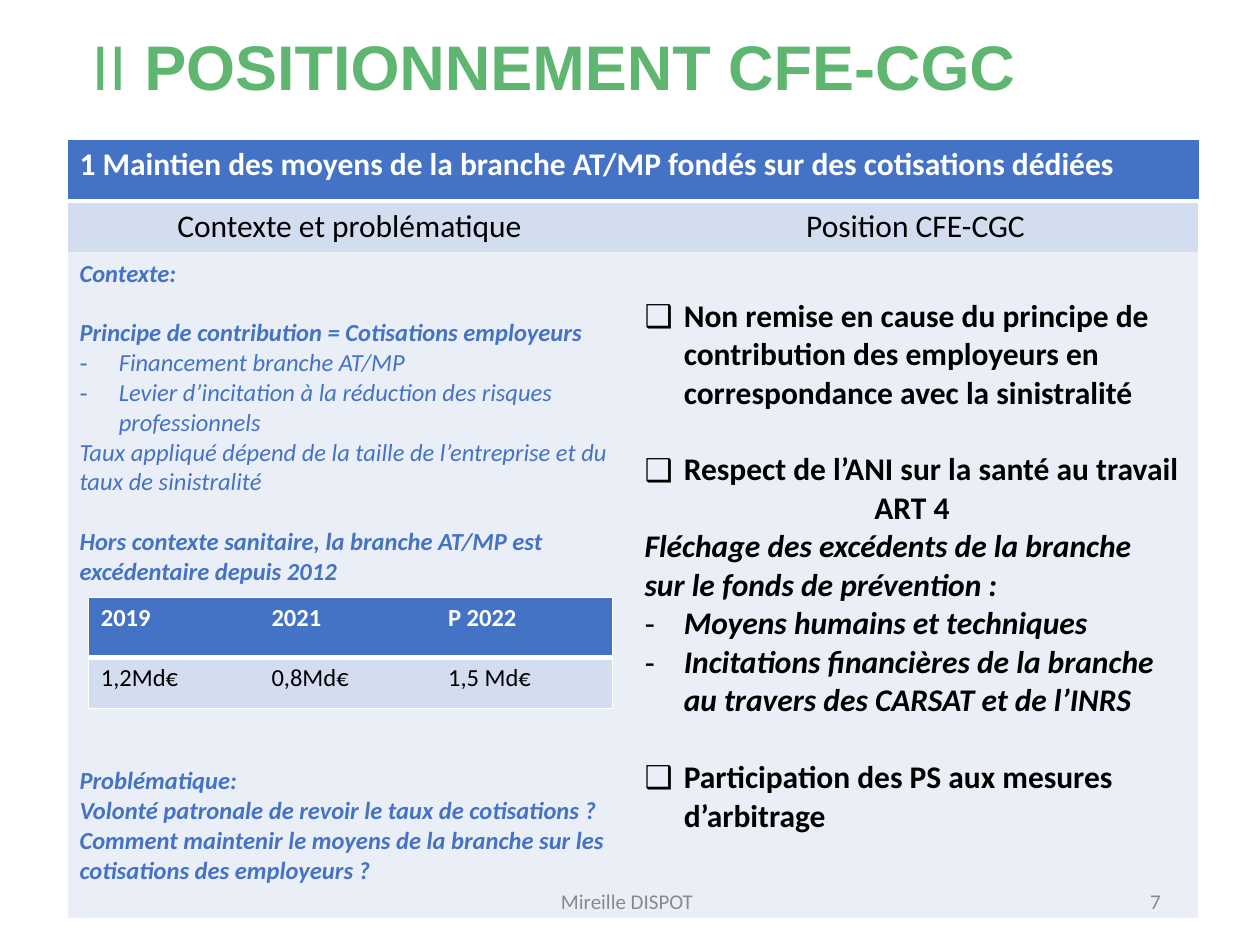
from dataclasses import dataclass

from lxml.etree import SubElement
from pptx import Presentation
from pptx.dml.color import RGBColor
from pptx.enum.text import MSO_ANCHOR, PP_ALIGN
from pptx.oxml.ns import qn
from pptx.util import Cm, Pt


@dataclass(frozen=True)
class Theme:
    """Colours, fonts and type sizes of the slide."""
    green: str = "5FB670"
    blue: str = "4472C4"
    band: str = "D2DEEF"
    pale: str = "EAEFF7"
    white: str = "FFFFFF"
    black: str = "000000"
    grey: str = "898989"
    heading_font: str = "Arial"
    body_font: str = "Calibri"
    title_size: int = 36
    heading_size: int = 18
    detail_size: int = 14
    footer_size: int = 12
    detail_gap: float = 17.1
    heading_gap: float = 22


THEME = Theme()

CONTEXT = [
    ("Contexte:", {}),
    ("Principe de contribution = Cotisations employeurs", {"before": THEME.detail_gap}),
    ("Financement branche AT/MP", {"bullet": "-", "bold": False}),
    ("Levier d’incitation à la réduction des risques professionnels", {"bullet": "-", "bold": False}),
    ("Taux appliqué dépend de la taille de l’entreprise et du taux de sinistralité", {"bold": False}),
    ("Hors contexte sanitaire, la branche AT/MP est excédentaire depuis 2012",
     {"before": THEME.detail_gap}),
    ("Problématique:", {"before": 6 * THEME.detail_gap}),
    ("Volonté patronale de revoir le taux de cotisations ? Comment maintenir le moyens "
     "de la branche sur les cotisations des employeurs ?", {}),
]

POSITION = [
    ("Non remise en cause du principe de contribution des employeurs en correspondance "
     "avec la sinistralité", {"bullet": "❑"}),
    ("Respect de l’ANI sur la santé au travail", {"bullet": "❑", "before": THEME.heading_gap}),
    ("ART 4 ", {"align": PP_ALIGN.CENTER}),
    ("Fléchage des excédents de la branche\vsur le fonds de prévention :", {"italic": True}),
    ("Moyens humains et techniques", {"bullet": "-", "italic": True}),
    ("Incitations financières de la branche au travers des CARSAT et de l’INRS",
     {"bullet": "-", "italic": True}),
    ("Participation des PS aux mesures d’arbitrage", {"bullet": "❑", "before": THEME.heading_gap}),
]

SURPLUS = {"2019": "1,2Md€", "2021": "0,8Md€", "P 2022": "1,5 Md€"}


def write(paragraph, text, *, size=THEME.heading_size, color=THEME.black, font=THEME.body_font,
          bold=False, italic=False, align=PP_ALIGN.LEFT, bullet=None, before=0):
    """Add text to a paragraph with the given format."""
    paragraph.alignment = align
    if before:
        paragraph.space_before = Pt(before)
    if bullet:
        properties = paragraph._p.get_or_add_pPr()
        properties.set("marL", str(Cm(0.79)))
        properties.set("indent", str(-Cm(0.79)))
        SubElement(properties, qn("a:buFont"), typeface=THEME.heading_font)
        SubElement(properties, qn("a:buChar"), char=bullet)
    for index, line in enumerate(text.split("\v")):
        if index:
            paragraph.add_line_break()
        run = paragraph.add_run()
        run.text = line
        run.font.size = Pt(size)
        run.font.name = font
        run.font.bold = bold
        run.font.italic = italic
        run.font.color.rgb = RGBColor.from_string(color)


def write_all(frame, entries, **common):
    """Write one paragraph per entry, with a shared format that entries may override."""
    for index, (text, own) in enumerate(entries):
        paragraph = frame.add_paragraph() if index else frame.paragraphs[0]
        write(paragraph, text, **{**common, **own})


def add_text_box(slide, box):
    """Add a wrapping, vertically centred text box and return its text frame."""
    frame = slide.shapes.add_textbox(*map(Cm, box)).text_frame
    frame.word_wrap = True
    frame.vertical_anchor = MSO_ANCHOR.MIDDLE
    return frame


def set_borders(cell, **widths):
    """Draw white cell borders of the given point widths, or none for zero."""
    for side in "LRTB":
        width = widths.get(side, 0)
        line = SubElement(cell._tc.get_or_add_tcPr(), qn(f"a:ln{side}"), w=str(Pt(width)))
        if width:
            SubElement(SubElement(line, qn("a:solidFill")), qn("a:srgbClr"), val=THEME.white)
        else:
            SubElement(line, qn("a:noFill"))


def add_grid(slide, box, columns, rows, fills):
    """Add a table with one fill per row, a white outline and a thick rule under its header."""
    left, top = box
    table = slide.shapes.add_table(len(rows), len(columns), Cm(left), Cm(top),
                                   Cm(sum(columns)), Cm(sum(rows))).table
    table.first_row = table.horz_banding = False
    for column, width in zip(table.columns, columns):
        column.width = Cm(width)
    for y, (height, fill) in enumerate(zip(rows, fills)):
        table.rows[y].height = Cm(height)
        for x in range(len(columns)):
            cell = table.cell(y, x)
            set_borders(cell, L=int(x == 0), R=int(x == len(columns) - 1),
                        T={0: 1, 1: 3}.get(y, 0),
                        B=3 if y == 0 else int(y == len(rows) - 1))
            cell.fill.solid()
            cell.fill.fore_color.rgb = RGBColor.from_string(fill)
    return table


def add_title(slide, box):
    """Place the slide title."""
    paragraph = add_text_box(slide, box).paragraphs[0]
    paragraph.line_spacing = 0.9
    style = {"size": THEME.title_size, "color": THEME.green, "font": THEME.heading_font}
    write(paragraph, "II ", **style)
    write(paragraph, "POSITIONNEMENT CFE-CGC", bold=True, **style)


def add_position_table(slide, box):
    """Place the table that sets context against position, with the surplus figures inside."""
    left, top = box
    table = add_grid(slide, box, (11.39, 11.43), (1.25, 1.04, 13.43),
                     (THEME.blue, THEME.band, THEME.pale))
    heading = table.cell(0, 0)
    heading.merge(table.cell(0, 1))
    write(heading.text_frame.paragraphs[0],
          "1 Maintien des moyens de la branche AT/MP fondés sur des cotisations dédiées",
          color=THEME.white, bold=True)
    for x, label in enumerate(("Contexte et problématique", "Position CFE-CGC")):
        write(table.cell(1, x).text_frame.paragraphs[0], label, align=PP_ALIGN.CENTER)
    write_all(table.cell(2, 0).text_frame, CONTEXT, size=THEME.detail_size,
              color=THEME.blue, bold=True, italic=True)
    position = table.cell(2, 1)
    position.margin_top = Cm(0.9)
    write_all(position.text_frame, POSITION, bold=True)
    add_surplus_table(slide, (left + 0.43, top + 9.24))


def add_surplus_table(slide, box):
    """Place the yearly surplus figures."""
    table = add_grid(slide, box, (3.44, 3.56, 3.57), (1.21, 1.03), (THEME.blue, THEME.band))
    for x, (year, amount) in enumerate(SURPLUS.items()):
        write(table.cell(0, x).text_frame.paragraphs[0], year,
              size=THEME.detail_size, color=THEME.white, bold=True)
        write(table.cell(1, x).text_frame.paragraphs[0], amount, size=THEME.detail_size)


def add_footer(slide, box):
    """Place the author and the page number."""
    left, top, width, height = box
    style = {"size": THEME.footer_size, "color": THEME.grey}
    author = add_text_box(slide, (left, top, 8.56, height))
    write(author.paragraphs[0], "Mireille DISPOT ", align=PP_ALIGN.CENTER, **style)
    number = add_text_box(slide, (left + width - 5.72, top, 5.72, height))
    write(number.paragraphs[0], "7", align=PP_ALIGN.RIGHT, **style)


def main():
    """Build and save the slide."""
    presentation = Presentation()
    presentation.slide_width, presentation.slide_height = Cm(25.4), Cm(19.05)
    slide = presentation.slides.add_slide(presentation.slide_layouts[6])
    add_title(slide, (1.6, 0.38, 21.9, 2.06))
    add_position_table(slide, (1.35, 2.8))
    add_footer(slide, (8.41, 17.66, 15.24, 1.01))
    presentation.save("out.pptx")


if __name__ == "__main__":
    main()
